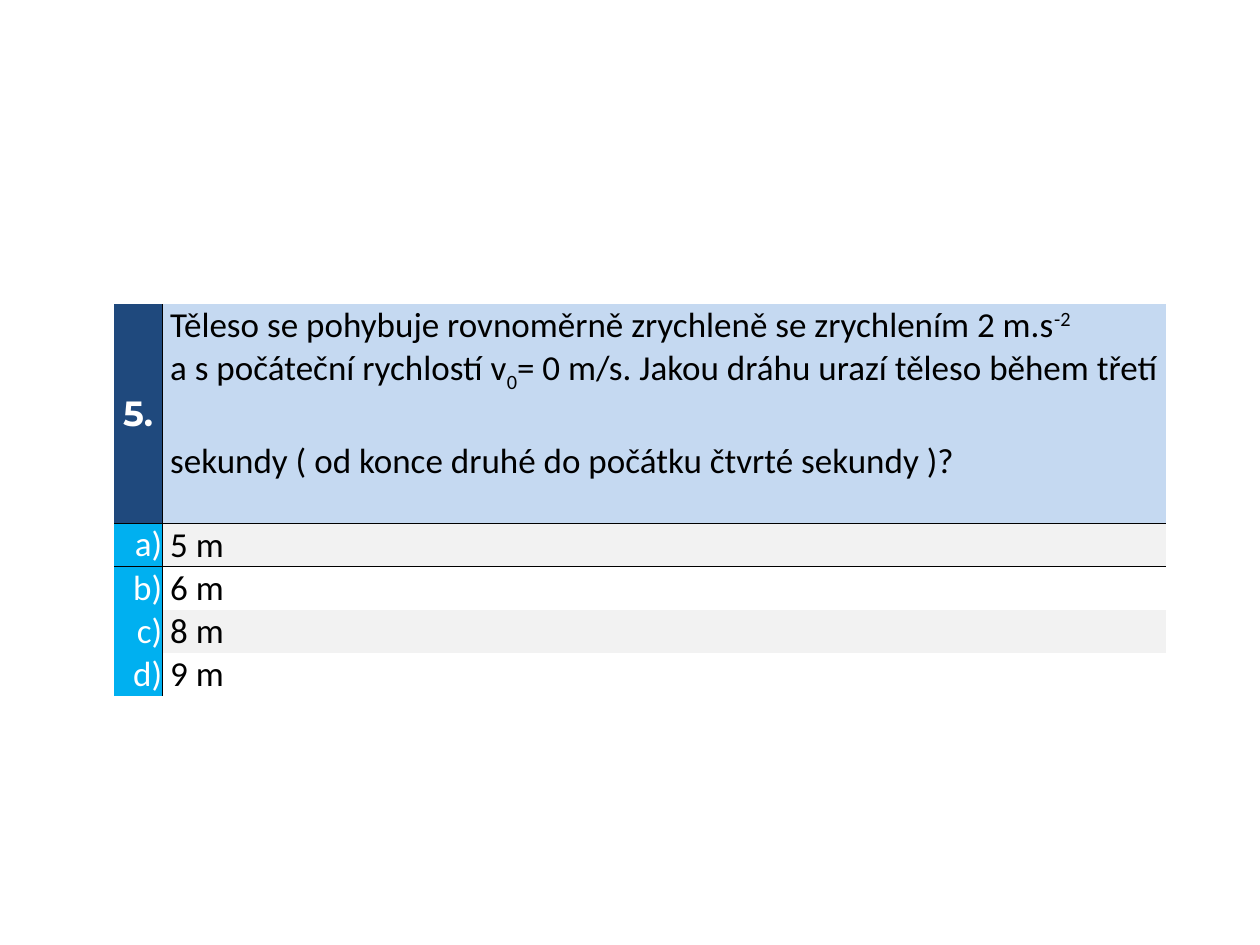
"""Build a quiz slide with one physics question and four answers."""
from lxml import etree
from pptx import Presentation
from pptx import util as u
from pptx.dml import color
from pptx.enum import text
from pptx.oxml import ns

COLORS = {"navy": "1F497D", "question": "C5D9F1", "label": "00B0F0",
          "band": "F2F2F2", "white": "FFFFFF", "black": "000000"}
NO_GRID_STYLE = "{2D5ABB26-0587-4C30-8999-92F81FD0307C}"


def format_cell(cell, fill, anchor, borders, left=0):
    cell.margin_left = u.Cm(left)
    cell.margin_right = cell.margin_top = cell.margin_bottom = 0
    cell.vertical_anchor = anchor
    properties = cell._tc.get_or_add_tcPr()
    for side in borders:
        line = etree.SubElement(properties, ns.qn(f"a:ln{side}"), w=str(u.Pt(0.5)))
        solid = etree.SubElement(line, ns.qn("a:solidFill"))
        etree.SubElement(solid, ns.qn("a:srgbClr"), val=COLORS["black"])
    cell.fill.solid()
    cell.fill.fore_color.rgb = color.RGBColor.from_string(COLORS[fill])


def add_run(paragraph, wording, ink="black", font="Calibri", bold=False, baseline=0):
    run = paragraph.add_run()
    run.text = wording
    run.font.size = u.Pt(20)
    run.font.name = font
    run.font.bold = bold
    run.font.color.rgb = color.RGBColor.from_string(COLORS[ink])
    if baseline:
        run.font._element.set("baseline", str(baseline * 1000))


presentation = Presentation()
presentation.slide_width = u.Cm(25.4)
presentation.slide_height = u.Cm(19.05)
slide = presentation.slides.add_slide(presentation.slide_layouts[6])

answers = ["5 m", "6 m", "8 m", "9 m"]
question_height, answer_height = 4.42, 0.87
label_width, text_width = 0.97, 20.24
indent = 0.16

shape = slide.shapes.add_table(
    len(answers) + 1, 2, u.Cm(2.3), u.Cm(6.13), u.Cm(label_width + text_width),
    u.Cm(question_height + len(answers) * answer_height))
table = shape.table
table.first_row = table.horz_banding = False
table._tbl.tblPr.find(ns.qn("a:tableStyleId")).text = NO_GRID_STYLE
for column, width in zip(table.columns, (label_width, text_width)):
    column.width = u.Cm(width)
for row in table.rows:
    row.height = u.Cm(answer_height)
table.rows[0].height = u.Cm(question_height)

number_cell, question_cell = table.rows[0].cells
format_cell(number_cell, "navy", text.MSO_ANCHOR.MIDDLE, "RB")
paragraph = number_cell.text_frame.paragraphs[0]
paragraph.alignment = text.PP_ALIGN.CENTER
add_run(paragraph, "5.", "white", "Montserrat", True)

format_cell(question_cell, "question", text.MSO_ANCHOR.TOP, "LB", indent)
question = [
    [("Těleso se pohybuje rovnoměrně zrychleně se zrychlením 2 m.s", 0), ("-2", 30)],
    [("a s počáteční rychlostí v", 0), ("0", -25),
     ("= 0 m/s. Jakou dráhu urazí těleso během třetí", 0)],
    [("sekundy ( od konce druhé do počátku čtvrté sekundy )?", 0)],
]
frame = question_cell.text_frame
for index, runs in enumerate(question):
    paragraph = frame.add_paragraph() if index else frame.paragraphs[0]
    for wording, baseline in runs:
        add_run(paragraph, wording, baseline=baseline)
paragraph.space_before = u.Pt(26)

for index, answer in enumerate(answers):
    label_cell, answer_cell = table.rows[index + 1].cells
    top = "" if index else "T"
    format_cell(label_cell, "label", text.MSO_ANCHOR.MIDDLE, "R" + top)
    paragraph = label_cell.text_frame.paragraphs[0]
    paragraph.alignment = text.PP_ALIGN.RIGHT
    add_run(paragraph, f"{'abcd'[index]})", "white")
    format_cell(answer_cell, "white" if index % 2 else "band",
                text.MSO_ANCHOR.BOTTOM, "L" + top, indent)
    add_run(answer_cell.text_frame.paragraphs[0], answer)

presentation.save("out.pptx")
